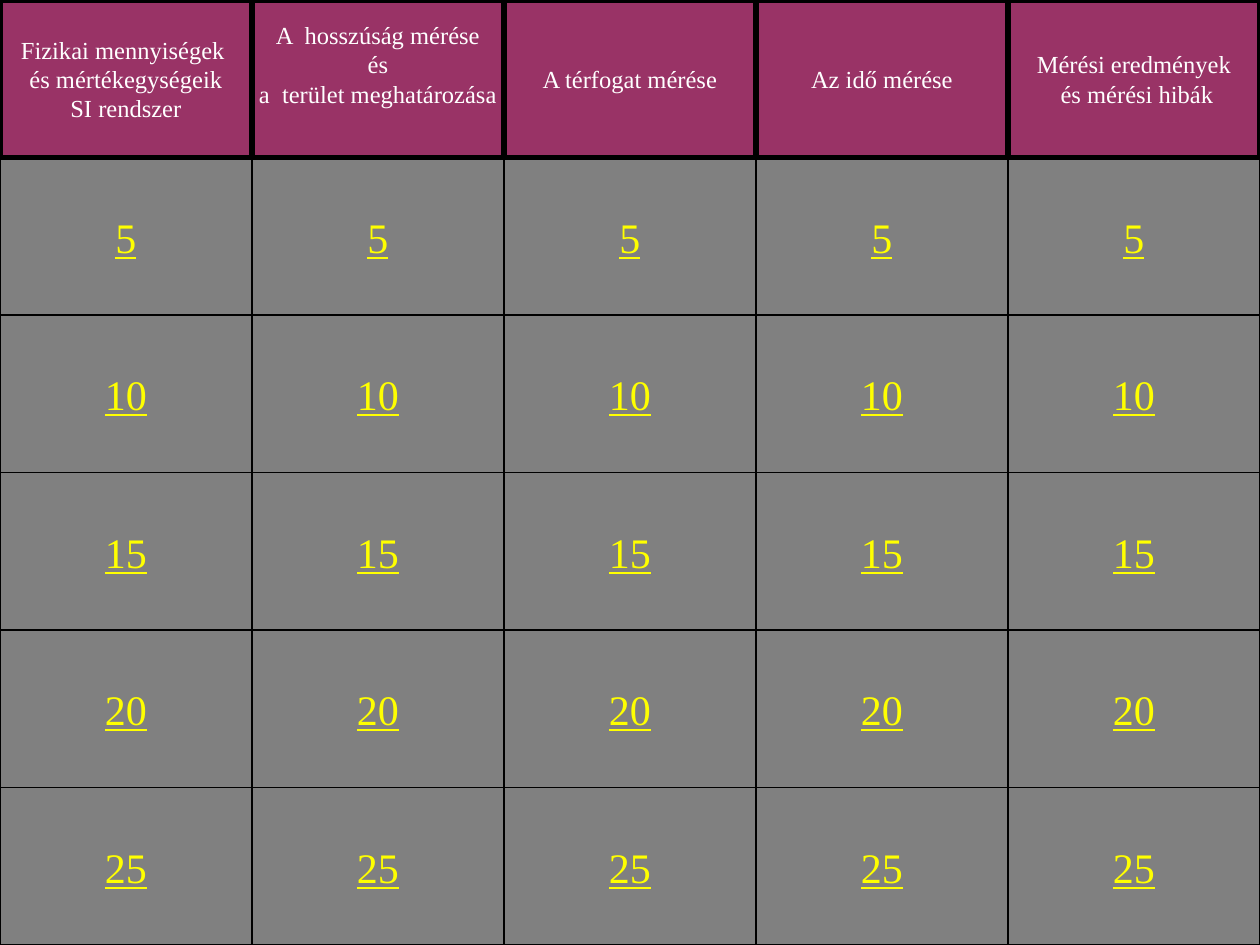
"""Build a quiz board with five topics and a grid of point buttons."""
from pptx import Presentation
from pptx.dml.color import RGBColor
from pptx.enum.shapes import MSO_SHAPE
from pptx.enum.text import MSO_ANCHOR, PP_ALIGN
from pptx.util import Cm, Pt

RECT = MSO_SHAPE.RECTANGLE
BUTTON = MSO_SHAPE.ACTION_BUTTON_CUSTOM
MIDDLE = MSO_ANCHOR.MIDDLE
CENTER = PP_ALIGN.CENTER

PLUM = RGBColor(0x99, 0x33, 0x66)
GRAY = RGBColor(0x80, 0x80, 0x80)
BLACK = RGBColor(0x00, 0x00, 0x00)
WHITE = RGBColor(0xFF, 0xFF, 0xFF)
YELLOW = RGBColor(0xFF, 0xFF, 0x00)

WIDTH, HEIGHT = Cm(25.4), Cm(19.05)
INSET = Cm(0.13)
RAISED = Cm(0.72)

TOPICS = [
    ("Fizikai mennyiségek \nés mértékegységeik\nSI rendszer", INSET),
    ("A  hosszúság mérése\nés\na  terület meghatározása", RAISED),
    ("A térfogat mérése", INSET),
    ("Az idő mérése", INSET),
    ("Mérési eredmények\n és mérési hibák", INSET),
]
POINTS = [5, 10, 15, 20, 25]


class Board:
    """Hold the style, the cell size and the current slide."""

    font = "Times New Roman"

    def __init__(self, slide, cols, rows):
        self.slide = slide
        self.wide = WIDTH // cols
        self.high = HEIGHT // rows

    def cell(self, kind, col, row, text, fill, line, size, color):
        shape = self.slide.shapes.add_shape(
            kind, col * self.wide, row * self.high, self.wide, self.high)
        shape.shadow.inherit = False
        shape.fill.solid()
        shape.fill.fore_color.rgb = fill
        shape.line.color.rgb = BLACK
        shape.line.width = Pt(line)
        frame = shape.text_frame
        frame.word_wrap = False
        frame.vertical_anchor = MIDDLE
        frame.text = text
        for para in frame.paragraphs:
            para.alignment = CENTER
            para.font.name = self.font
            para.font.size = Pt(size)
            para.font.color.rgb = color
        return frame

    def topic(self, col, text, bottom):
        frame = self.cell(RECT, col, 0, text, PLUM, 3, 14, WHITE)
        frame.margin_bottom = bottom

    def button(self, col, row, points):
        frame = self.cell(BUTTON, col, row, str(points), GRAY, 0.75, 24, YELLOW)
        frame.paragraphs[0].font.underline = True


def main():
    deck = Presentation()
    deck.slide_width, deck.slide_height = WIDTH, HEIGHT
    slide = deck.slides.add_slide(deck.slide_layouts[6])
    board = Board(slide, len(TOPICS), len(POINTS) + 1)
    for col in range(len(TOPICS)):
        for row, points in enumerate(POINTS, 1):
            board.button(col, row, points)
    for col, (text, bottom) in enumerate(TOPICS):
        board.topic(col, text, bottom)
    deck.save("out.pptx")


if __name__ == "__main__":
    main()
